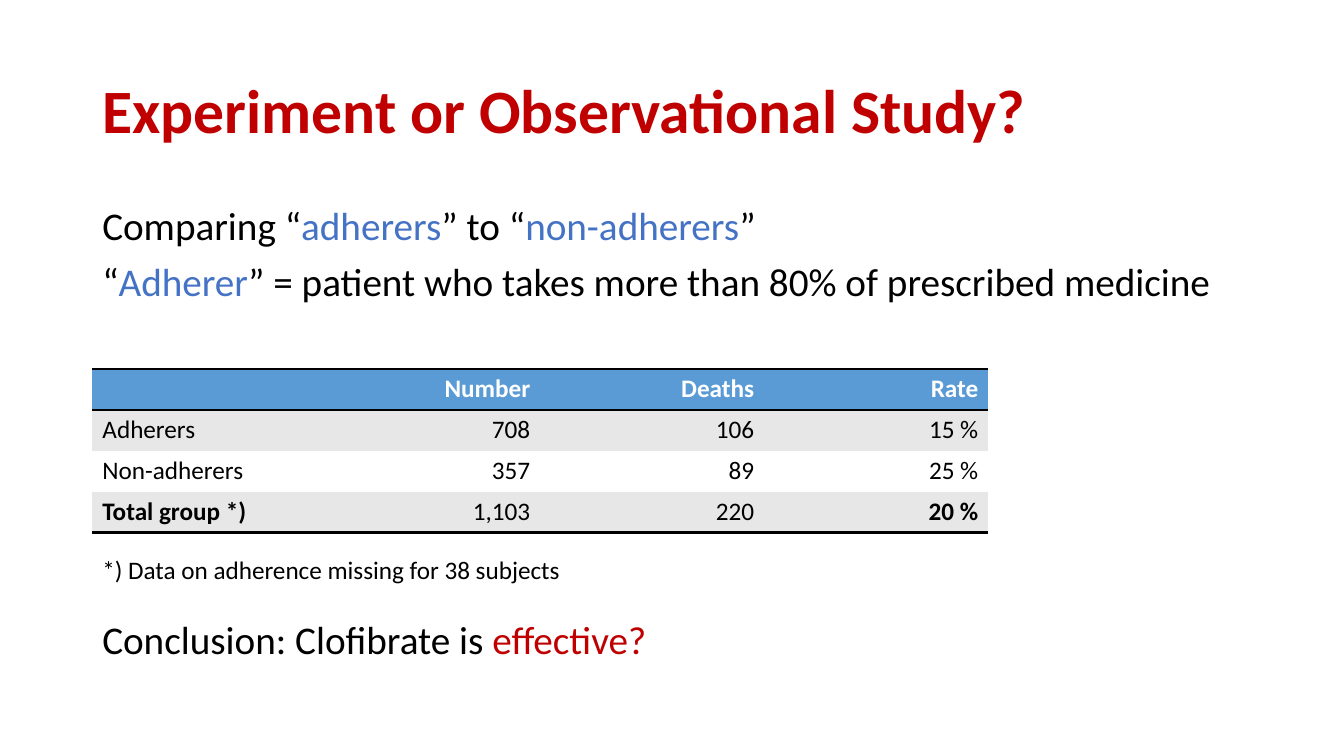
from dataclasses import dataclass

from lxml.etree import SubElement
from pptx import Presentation
from pptx.dml.color import RGBColor
from pptx.enum.text import MSO_ANCHOR as Anchor, PP_ALIGN as Align
from pptx.oxml.ns import qn
from pptx.util import Pt

FONT = "Calibri"
BLACK, WHITE, RED, BLUE = "000000", "FFFFFF", "C00000", "4472C4"
HEADER_BLUE, BAND_GRAY = "5B9BD5", "E7E7E7"
LEFT = 66
COLUMN_WIDTH, ROW_HEIGHT = 160, 29.2
PLAIN_TABLE_STYLE = "{2D5ABB26-0587-4C30-8999-92F81FD0307C}"


@dataclass
class TableRow:
    values: tuple[str, ...]
    fill: str
    color: str = BLACK
    bold_columns: tuple[int, ...] = ()
    borders: tuple[str, ...] = ()


ROWS = [
    TableRow(("", "Number", "Deaths", "Rate"), HEADER_BLUE, WHITE, (0, 1, 2, 3), ("lnT", "lnB")),
    TableRow(("Adherers", "708", "106", "15 %"), BAND_GRAY),
    TableRow(("Non-adherers", "357", "89", "25 %"), WHITE),
    TableRow(("Total group *)", "1,103", "220", "20 %"), BAND_GRAY, bold_columns=(0, 3), borders=("lnB",)),
]


def rgb(value: str) -> RGBColor:
    return RGBColor.from_string(value)


def add_span(para, text: str, *, size: float, color: str = BLACK, bold: bool = False) -> None:
    span = para.add_run()
    span.text = text
    span.font.name = FONT
    span.font.size = Pt(size)
    span.font.bold = bold
    span.font.color.rgb = rgb(color)


def add_box(page, top: float, width: float, height: float, *, wrap: bool = True, anchor=Anchor.TOP):
    box = page.shapes.add_textbox(Pt(LEFT), Pt(top), Pt(width), Pt(height))
    box.text_frame.word_wrap = wrap
    box.text_frame.vertical_anchor = anchor
    return box.text_frame


def add_border(cell, side: str, position: int) -> None:
    properties = cell._tc.get_or_add_tcPr()
    line = SubElement(properties, qn(f"a:{side}"), w=str(Pt(2)))
    color_fill = SubElement(line, qn("a:solidFill"))
    SubElement(color_fill, qn("a:srgbClr"), val=BLACK)
    properties.insert(position, line)  # borders come before the fill


def add_table(page, top: float, rows: list[TableRow]) -> None:
    count = len(rows[0].values)
    frame = page.shapes.add_table(len(rows), count, Pt(LEFT), Pt(top),
                                  Pt(count * COLUMN_WIDTH), Pt(len(rows) * ROW_HEIGHT))
    table = frame.table
    table.first_row = table.horz_banding = False
    table._tbl.tblPr.find(qn("a:tableStyleId")).text = PLAIN_TABLE_STYLE
    for column in table.columns:
        column.width = Pt(COLUMN_WIDTH)
    for index, row in enumerate(rows):
        table.rows[index].height = Pt(ROW_HEIGHT)
        for column, value in enumerate(row.values):
            cell = table.cell(index, column)
            cell.fill.solid()
            cell.fill.fore_color.rgb = rgb(row.fill)
            para = cell.text_frame.paragraphs[0]
            para.alignment = Align.RIGHT if column else Align.LEFT
            if value:
                add_span(para, value, size=18, color=row.color, bold=column in row.bold_columns)
            for position, side in enumerate(row.borders):
                add_border(cell, side, position)


def main() -> None:
    deck = Presentation()
    deck.slide_width, deck.slide_height = Pt(960), Pt(540)
    page = deck.slides.add_slide(deck.slide_layouts[6])

    # Title
    title = add_box(page, 28.75, 828, 104.4, anchor=Anchor.MIDDLE).paragraphs[0]
    title.line_spacing = 0.9
    add_span(title, "Experiment or Observational Study?", size=44, color=RED, bold=True)

    # Definitions, with the key terms in blue
    definitions = [
        [("Comparing “", BLACK), ("adherers", BLUE), ("” to “", BLACK),
         ("non-adherers", BLUE), ("”", BLACK)],
        [("“", BLACK), ("Adherer", BLUE),
         ("” = patient who takes more than 80% of prescribed medicine", BLACK)],
    ]
    body = add_box(page, 143.75, 828, 100)
    for index, parts in enumerate(definitions):
        para = body.add_paragraph() if index else body.paragraphs[0]
        para.line_spacing = 0.9
        para.space_before = Pt(10)
        for text, color in parts:
            add_span(para, text, size=28, color=color)

    # Mortality table
    add_table(page, 263.5, ROWS)

    # Footnote and conclusion
    closing = add_box(page, 392.5, 407.5, 85, wrap=False)
    add_span(closing.paragraphs[0], "*) Data on adherence missing for 38 subjects", size=18)
    conclusion = closing.add_paragraph()
    conclusion.space_before = Pt(22)
    add_span(conclusion, "Conclusion: Clofibrate is ", size=28)
    add_span(conclusion, "effective?", size=28, color=RED)

    deck.save("out.pptx")


if __name__ == "__main__":
    main()
